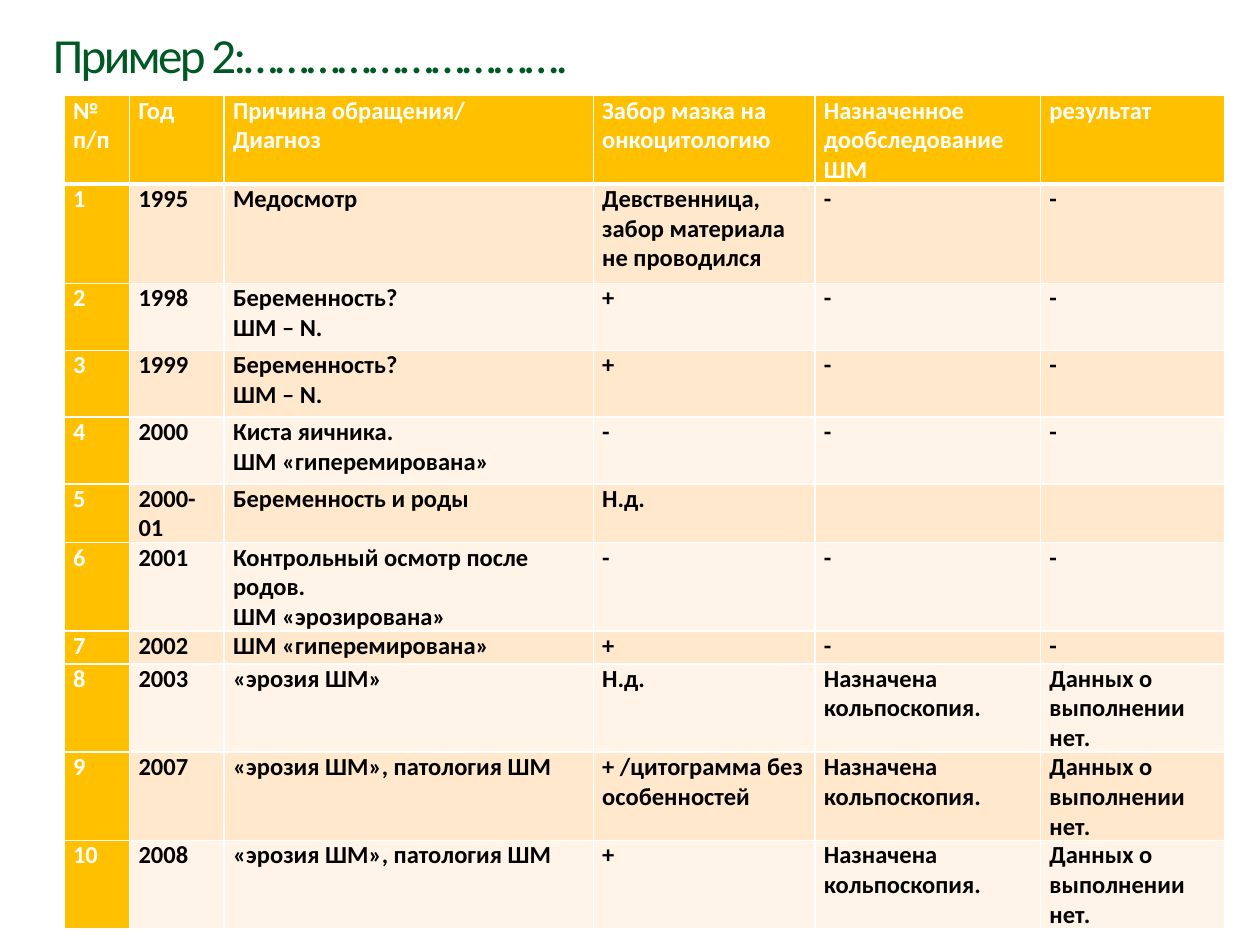
import lxml.etree
import pptx
import pptx.dml.color
import pptx.oxml.ns
import pptx.util

Inches = pptx.util.Inches
RGBColor = pptx.dml.color.RGBColor

GREEN = RGBColor(0x00, 0x58, 0x25)
AMBER = RGBColor(0xFF, 0xC0, 0x00)
PEACH = RGBColor(0xFF, 0xE8, 0xCC)
CREAM = RGBColor(0xFF, 0xF4, 0xE7)
WHITE = RGBColor(0xFF, 0xFF, 0xFF)
BLACK = RGBColor(0x00, 0x00, 0x00)
FONT = "Calibri"

COLUMN_WIDTHS = [0.52, 0.75, 2.93, 1.76, 1.79, 1.46]
ROW_HEIGHTS = [0.66, 0.79, 0.53, 0.53, 0.53, 0.44, 0.66, 0.26, 0.66, 0.66, 0.66]
COLPOSCOPY = ["Назначена кольпоскопия.", "Данных о выполнении нет."]
HEADER = [
    "№ п/п",
    "Год",
    "Причина обращения/\nДиагноз",
    "Забор мазка на онкоцитологию",
    "Назначенное дообследование ШМ",
    "результат",
]
VISITS = [
    ["1995", "Медосмотр", "Девственница, забор материала не проводился", "-", "-"],
    ["1998", "Беременность?\nШМ – N.", "+", "-", "-"],
    ["1999", "Беременность?\nШМ – N.", "+", "-", "-"],
    ["2000", "Киста яичника.\nШМ «гиперемирована»", "-", "-", "-"],
    ["2000-01", "Беременность и роды", "Н.д.", "", ""],
    ["2001", "Контрольный осмотр после родов.\nШМ «эрозирована»", "-", "-", "-"],
    ["2002", "ШМ «гиперемирована»", "+", "-", "-"],
    ["2003", "«эрозия ШМ»", "Н.д.", *COLPOSCOPY],
    ["2007", "«эрозия ШМ», патология ШМ", "+ /цитограмма без особенностей", *COLPOSCOPY],
    ["2008", "«эрозия ШМ», патология ШМ", "+", *COLPOSCOPY],
]


def format_font(font, size, color, bold):
    font.name = FONT
    font.size = pptx.util.Pt(size)
    font.color.rgb = color
    font.bold = bold


def set_border(cell, side, width):
    properties = cell._tc.get_or_add_tcPr()
    line = lxml.etree.SubElement(properties, pptx.oxml.ns.qn(f"a:ln{side}"))
    line.set("w", str(pptx.util.Pt(width)))
    fill = lxml.etree.SubElement(line, pptx.oxml.ns.qn("a:solidFill"))
    lxml.etree.SubElement(fill, pptx.oxml.ns.qn("a:srgbClr")).set("val", str(WHITE))


def fill_cell(cell, text, row, column):
    heading = row == 0 or column == 0
    cell.margin_left = cell.margin_right = Inches(0.07)
    cell.margin_top = cell.margin_bottom = 0
    for side in "LRTB":
        thick = (row, side) in [(0, "B"), (1, "T")]
        set_border(cell, side, 3 if thick else 1)
    cell.fill.solid()
    cell.fill.fore_color.rgb = AMBER if heading else PEACH if row % 2 else CREAM
    cell.text_frame.text = text
    for para in cell.text_frame.paragraphs:
        for span in para.runs:
            format_font(span.font, 14, WHITE if heading else BLACK, True)


def add_title(page, left, top, width, height):
    box = page.shapes.add_textbox(left, top, width, height)
    frame = box.text_frame
    frame.word_wrap = True
    frame.margin_left = frame.margin_right = 0
    frame.margin_top = frame.margin_bottom = 0
    frame.text = "Пример 2:…………………………."
    para = frame.paragraphs[0]
    para.line_spacing = 0.9
    span = para.runs[0]
    format_font(span.font, 28, GREEN, False)
    span.font._element.set("spc", "-150")


def add_visit_table(page, left, top, width, height):
    rows = [HEADER] + [[str(number), *visit] for number, visit in enumerate(VISITS, 1)]
    table = page.shapes.add_table(
        len(rows), len(HEADER), left, top, width, height
    ).table
    table.first_col = True
    for column, column_width in zip(table.columns, COLUMN_WIDTHS):
        column.width = Inches(column_width)
    for row, row_height in zip(table.rows, ROW_HEIGHTS):
        row.height = Inches(row_height)
    for row, texts in enumerate(rows):
        for column, text in enumerate(texts):
            fill_cell(table.cell(row, column), text, row, column)


def main():
    deck = pptx.Presentation()
    deck.slide_width = Inches(10)
    deck.slide_height = Inches(7.5)
    page = deck.slides.add_slide(deck.slide_layouts[6])
    add_title(page, Inches(0.42), Inches(0.25), Inches(9.17), Inches(0.42))
    add_visit_table(
        page,
        Inches(0.51),
        Inches(0.76),
        Inches(sum(COLUMN_WIDTHS)),
        Inches(sum(ROW_HEIGHTS)),
    )
    deck.save("out.pptx")


if __name__ == "__main__":
    main()
